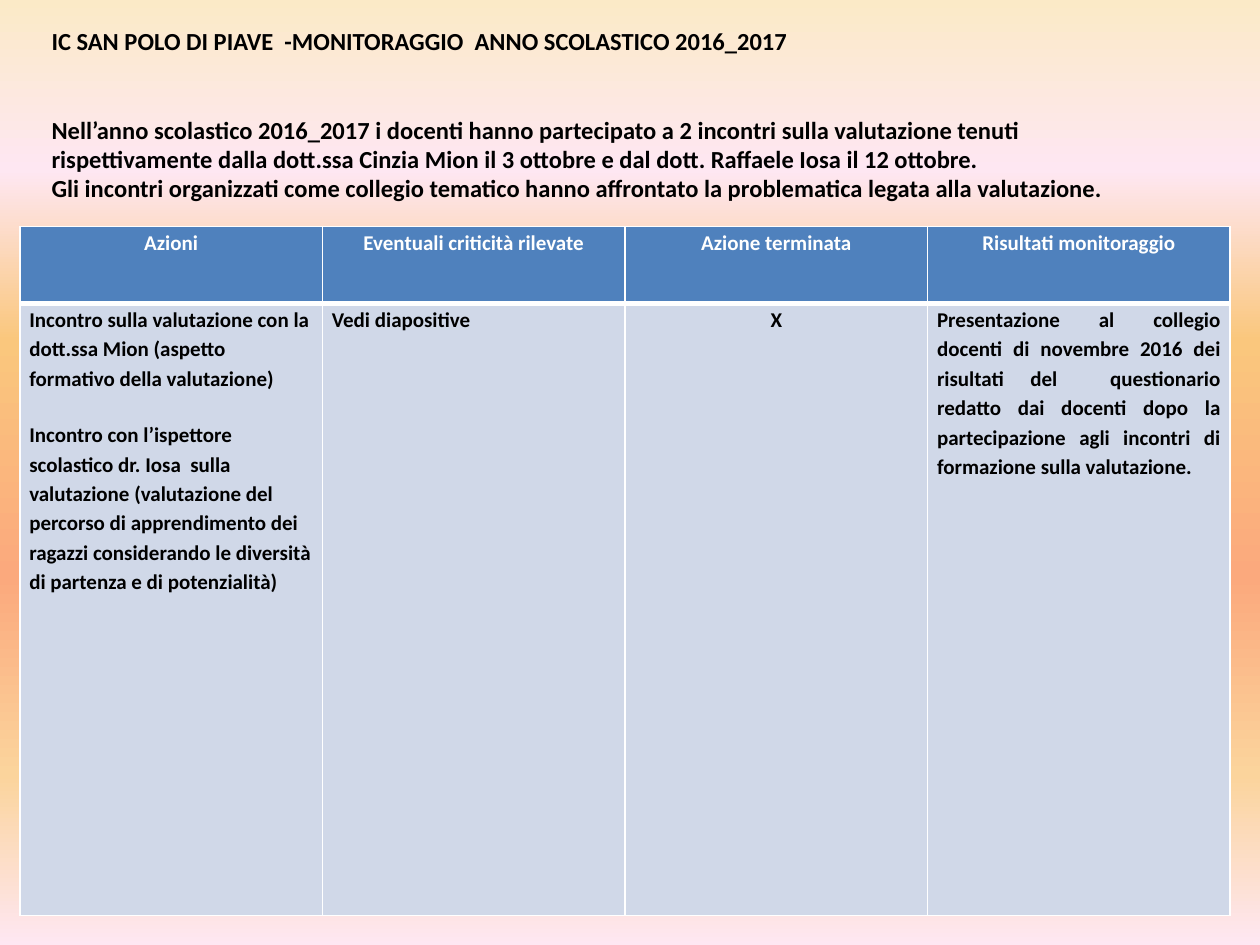
"""Build the school monitoring slide: heading, summary and actions table."""
from dataclasses import dataclass

from lxml.etree import SubElement
from pptx import Presentation
from pptx.dml.color import RGBColor
from pptx.enum.text import PP_ALIGN
from pptx.oxml.ns import qn
from pptx.slide import Slide
from pptx.table import _Cell
from pptx.text.text import _Paragraph
from pptx.util import Cm, Pt

BLACK = RGBColor(0x00, 0x00, 0x00)
WHITE = RGBColor(0xFF, 0xFF, 0xFF)
HEADER_BLUE = RGBColor(0x4F, 0x81, 0xBD)
BODY_BLUE = RGBColor(0xD0, 0xD8, 0xE8)
CREAM = RGBColor(0xFB, 0xEA, 0xC7)
PINK = RGBColor(0xFE, 0xE7, 0xF2)
AMBER = RGBColor(0xFA, 0xC7, 0x7D)
CORAL = RGBColor(0xFB, 0xA9, 0x7D)
SAND = RGBColor(0xFB, 0xD4, 0x9C)
SUNRISE = ((0, CREAM), (18, PINK), (36, AMBER), (61, CORAL), (82, SAND), (100, PINK))

FONT = "Calibri"
THIN, THICK = Pt(1), Pt(3)
COLUMN_WIDTH = Cm(6.1)
ROW_HEIGHTS = (Cm(1.55), Cm(12.34))

SUMMARY = (
    "IC SAN POLO DI PIAVE  -MONITORAGGIO  ANNO SCOLASTICO 2016_2017",
    "Nell’anno scolastico 2016_2017 i docenti hanno partecipato a 2 incontri sulla "
    "valutazione tenuti rispettivamente dalla dott.ssa Cinzia Mion il 3 ottobre e dal "
    "dott. Raffaele Iosa il 12 ottobre.",
    "Gli incontri organizzati come collegio tematico hanno affrontato la problematica "
    "legata alla valutazione.",
)


@dataclass(frozen=True)
class MonitoringColumn:
    heading: str
    content: str
    alignment: PP_ALIGN


COLUMNS = (
    MonitoringColumn(
        "Azioni",
        "Incontro sulla valutazione con la dott.ssa Mion (aspetto formativo della "
        "valutazione)\nIncontro con l’ispettore scolastico dr. Iosa  sulla valutazione "
        "(valutazione del percorso di apprendimento dei ragazzi considerando le "
        "diversità di partenza e di potenzialità)",
        PP_ALIGN.LEFT,
    ),
    MonitoringColumn("Eventuali criticità rilevate", "Vedi diapositive", PP_ALIGN.JUSTIFY),
    MonitoringColumn("Azione terminata", "X", PP_ALIGN.CENTER),
    MonitoringColumn(
        "Risultati monitoraggio",
        "Presentazione al collegio docenti di novembre 2016 dei risultati del  "
        "questionario redatto dai docenti dopo la partecipazione agli incontri di "
        "formazione sulla valutazione.",
        PP_ALIGN.JUSTIFY,
    ),
)


def format_runs(paragraph: _Paragraph, size: int, color: RGBColor) -> None:
    for run in paragraph.runs:
        run.font.name = FONT
        run.font.size = Pt(size)
        run.font.bold = True
        run.font.color.rgb = color


def paint_background(slide: Slide) -> None:
    fill = slide.background.fill
    fill.gradient()
    fill.gradient_angle = 270
    stops = slide.element.find(f".//{qn('a:gsLst')}")
    for stop in list(stops):
        stops.remove(stop)
    for percent, color in SUNRISE:
        stop = SubElement(stops, qn("a:gs"), pos=str(percent * 1000))
        SubElement(stop, qn("a:srgbClr"), val=str(color))


def add_summary(slide: Slide) -> None:
    summary = slide.shapes.add_textbox(Cm(0.79), Cm(0.41), Cm(22.23), Cm(5.38)).text_frame
    summary.word_wrap = True
    summary.text = "\n".join(SUMMARY)
    for paragraph in summary.paragraphs:
        format_runs(paragraph, 14, BLACK)
    summary.paragraphs[0].space_after = Pt(33.5)


def add_borders(cell: _Cell, top: Pt, bottom: Pt) -> None:
    properties = cell._tc.get_or_add_tcPr()
    for side, width in (("L", THIN), ("R", THIN), ("T", top), ("B", bottom)):
        line = SubElement(properties, qn(f"a:ln{side}"), w=str(int(width)))
        SubElement(SubElement(line, qn("a:solidFill")), qn("a:srgbClr"), val=str(WHITE))


def fill_cell(cell: _Cell, text: str, alignment: PP_ALIGN, color: RGBColor,
              background: RGBColor) -> None:
    cell.margin_left = cell.margin_right = Cm(0.19)
    cell.margin_top = cell.margin_bottom = 0
    cell.fill.solid()
    cell.fill.fore_color.rgb = background
    cell.text_frame.text = text
    for index, paragraph in enumerate(cell.text_frame.paragraphs):
        paragraph.alignment = alignment
        paragraph.line_spacing = 1.15
        if index:
            paragraph.space_before = Pt(15.5)
        format_runs(paragraph, 12, color)


def add_monitoring_table(slide: Slide) -> None:
    table = slide.shapes.add_table(
        len(ROW_HEIGHTS), len(COLUMNS), Cm(0.4), Cm(4.57),
        COLUMN_WIDTH * len(COLUMNS), sum(ROW_HEIGHTS),
    ).table
    table.horz_banding = False
    for row, height in zip(table.rows, ROW_HEIGHTS):
        row.height = height
    for index, column in enumerate(COLUMNS):
        table.columns[index].width = COLUMN_WIDTH
        heading, content = table.cell(0, index), table.cell(1, index)
        add_borders(heading, THIN, THICK)
        add_borders(content, THICK, THIN)
        fill_cell(heading, column.heading, PP_ALIGN.CENTER, WHITE, HEADER_BLUE)
        fill_cell(content, column.content, column.alignment, BLACK, BODY_BLUE)


def main() -> None:
    presentation = Presentation()
    presentation.slide_width, presentation.slide_height = Cm(25.4), Cm(19.05)
    slide = presentation.slides.add_slide(presentation.slide_layouts[6])
    paint_background(slide)
    add_summary(slide)
    add_monitoring_table(slide)
    presentation.save("out.pptx")


if __name__ == "__main__":
    main()
